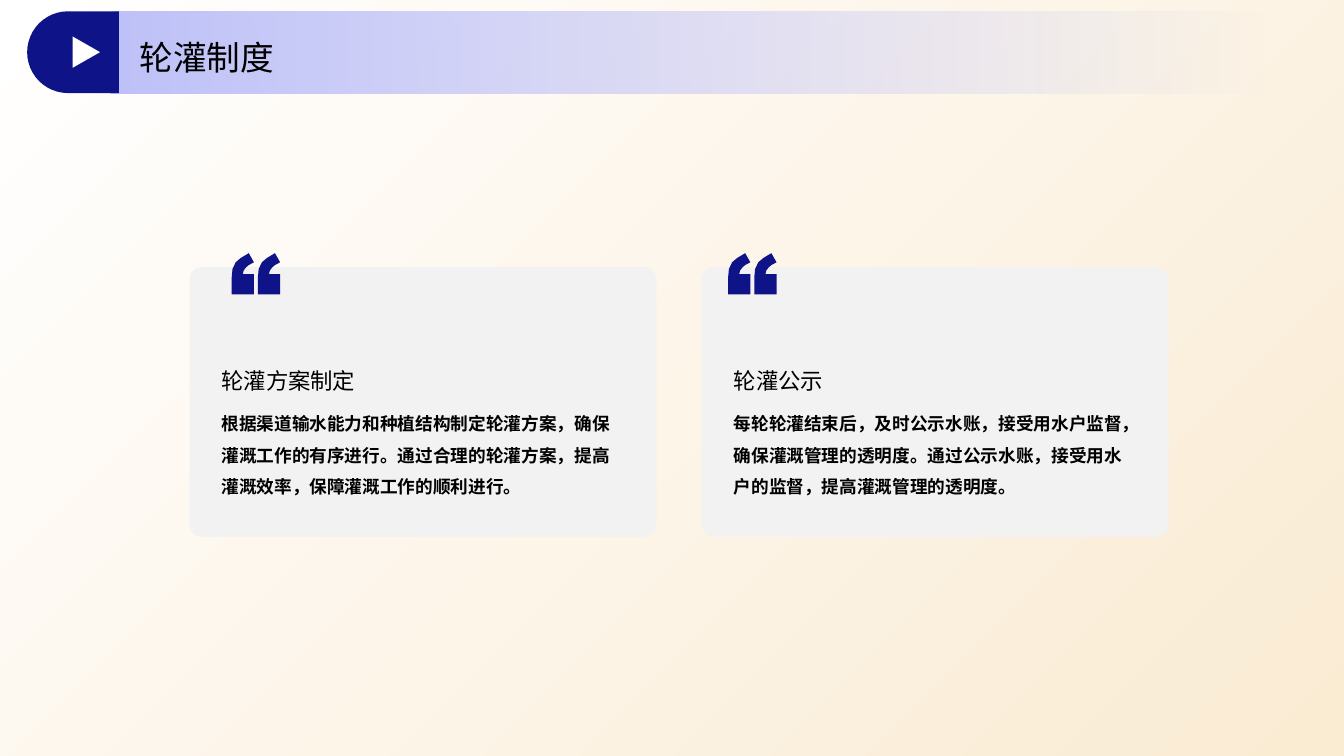
"""Build the rotational irrigation slide with two quoted cards."""
import lxml.etree
import pptx
import pptx.dml.color
import pptx.enum.shapes
import pptx.enum.text
import pptx.oxml.ns
import pptx.util

Cm = pptx.util.Cm
Pt = pptx.util.Pt
qn = pptx.oxml.ns.qn
SHAPE = pptx.enum.shapes.MSO_SHAPE
ANCHOR = pptx.enum.text.MSO_ANCHOR

COLORS = {
    "navy": "0E1488",
    "lilac": "BEC1F8",
    "card": "F2F2F2",
    "sand": "FAEBD3",
    "white": "FFFFFF",
    "text": "000000",
}
FONT = "Noto Sans CJK SC"
WIDTH, HEIGHT = 33.87, 19.05

CARD_TOP, CARD_WIDTH, CARD_HEIGHT = 6.73, 11.76, 6.8
CARDS = [
    (4.78, 1.06, "轮灌方案制定",
     "根据渠道输水能力和种植结构制定轮灌方案，确保灌溉工作的有序进行。"
     "通过合理的轮灌方案，提高灌溉效率，保障灌溉工作的顺利进行。"),
    (17.69, 0.66, "轮灌公示",
     "每轮轮灌结束后，及时公示水账，接受用水户监督，确保灌溉管理的透明度。"
     "通过公示水账，接受用水户的监督，提高灌溉管理的透明度。"),
]


def curve(p0, p1, p2, p3):
    """Return the middle and the end of a cubic Bezier curve."""
    middle = tuple((a + 3 * b + 3 * c + d) / 8 for a, b, c, d in zip(p0, p1, p2, p3))
    return [middle, p3]


QUOTE_MARK = [
    (43, 0), (56, 23),
    *curve((56, 23), (46, 28), (38, 33), (36, 36)),
    *curve((36, 36), (30, 41), (30, 46), (28, 53)),
    (56, 53), (56, 104), (0, 104), (0, 61),
    *curve((0, 61), (0, 46), (3, 33), (10, 23)),
    *curve((10, 23), (15, 15), (28, 8), (43, 0))[:1],
]
QUOTE_STEP = 66


class SlideBuilder:
    """Hold the style and the current slide."""

    def __init__(self, prs, layout):
        """Add a slide with the given layout."""
        self.s = prs.slides.add_slide(layout)

    def color(self, name):
        """Return a named colour."""
        return pptx.dml.color.RGBColor.from_string(COLORS[name])

    def finish(self, sp, fill):
        """Give a shape a plain fill and no line or shadow."""
        sp.shadow.inherit = False
        sp.line.fill.background()
        if fill:
            sp.fill.solid()
            sp.fill.fore_color.rgb = self.color(fill)
        return sp

    def shape(self, kind, box, fill=None, adjustments=(), rotation=0):
        """Add a preset shape."""
        sp = self.s.shapes.add_shape(kind, *map(Cm, box))
        for i, value in enumerate(adjustments):
            sp.adjustments[i] = value
        sp.rotation = rotation
        return self.finish(sp, fill)

    def gradient(self, kind, box, start, end, angle=0, fade=False):
        """Add a preset shape with a linear gradient."""
        sp = self.shape(kind, box)
        sp.fill.gradient()
        sp.fill.gradient_angle = angle
        for stop, name, position in zip(sp.fill.gradient_stops, (start, end), (0, 1)):
            stop.color.rgb = self.color(name)
            stop.position = position
        if fade:
            last = list(sp.element.spPr.iter(qn("a:srgbClr")))[-1]
            lxml.etree.SubElement(last, qn("a:alpha"), val="0")
        return sp

    def quotes(self, left, top):
        """Add a pair of opening quotation marks."""
        second = [(x + QUOTE_STEP, y) for x, y in QUOTE_MARK]
        builder = self.s.shapes.build_freeform(*QUOTE_MARK[0], scale=Cm(0.01))
        builder.add_line_segments(QUOTE_MARK[1:], close=True)
        builder.move_to(*second[0])
        builder.add_line_segments(second[1:], close=True)
        return self.finish(builder.convert_to_shape(Cm(left), Cm(top)), "navy")

    def text(self, idx, box, text, size, spacing, anchor, inset=(0, 0), bold=False):
        """Fill a placeholder, place it and bring it to the front."""
        sp = self.s.placeholders[idx]
        self.s.shapes.element.append(sp.element)
        sp.left, sp.top, sp.width, sp.height = map(Cm, box)
        tf = sp.text_frame
        tf.text = text
        tf.word_wrap = True
        tf.auto_size = pptx.enum.text.MSO_AUTO_SIZE.NONE
        tf.vertical_anchor = anchor
        tf.margin_left = tf.margin_right = Cm(inset[0])
        tf.margin_top = tf.margin_bottom = Cm(inset[1])
        p = tf.paragraphs[0]
        pPr = p._p.get_or_add_pPr()
        pPr.set("marL", "0")
        pPr.set("indent", "0")
        lxml.etree.SubElement(pPr, qn("a:buNone"))
        p.alignment = pptx.enum.text.PP_ALIGN.LEFT
        p.line_spacing = spacing
        p.space_before = Pt(0)
        r = p.runs[0]
        r.font.size = Pt(size)
        r.font.bold = bold
        r.font.color.rgb = self.color("text")
        r.font.name = FONT
        lxml.etree.SubElement(r._r.get_or_add_rPr(), qn("a:ea"), typeface=FONT)

    def card(self, number, left, quote_offset, heading, body):
        """Add one card with its heading, body and quotation marks."""
        self.shape(SHAPE.ROUNDED_RECTANGLE,
                   (left, CARD_TOP, CARD_WIDTH, CARD_HEIGHT), "card", [0.046])
        text_left, text_width, inset = left + 0.62, 10.55, (0.18, 0.1)
        self.text(2 * number + 1, (text_left, 7.74, text_width, 2.29),
                  heading, 16, 1.3, ANCHOR.BOTTOM, inset)
        self.text(2 * number + 2, (text_left, 10.03, text_width, 2.86),
                  body, 12.65, 1.5, ANCHOR.TOP, inset, bold=True)
        self.quotes(left + quote_offset, 6.38)

    def header(self, title):
        """Add the title bar with its play button."""
        self.gradient(SHAPE.ROUNDED_RECTANGLE, (2.54, 0.3, 29.46, 2.05),
                      "lilac", "lilac", fade=True)
        self.text(0, (3.52, 0.69, 21.62, 1.37), title, 24, 1.1, ANCHOR.MIDDLE)
        self.shape(SHAPE.ROUND_2_SAME_RECTANGLE, (0.81, 0.16, 2.06, 2.31),
                   "navy", [0.5, 0], 270)
        self.shape(SHAPE.ISOSCELES_TRIANGLE, (1.78, 0.97, 0.79, 0.69),
                   "white", rotation=90)


def main():
    """Build and save the presentation."""
    prs = pptx.Presentation()
    prs.slide_width, prs.slide_height = Cm(WIDTH), Cm(HEIGHT)
    comparison = prs.slide_layouts.get_by_name("Comparison")
    slide = SlideBuilder(prs, comparison)
    slide.gradient(SHAPE.RECTANGLE, (0, 0, WIDTH, HEIGHT), "white", "sand", angle=315)
    for number, card in enumerate(CARDS):
        slide.card(number, *card)
    slide.header("轮灌制度")
    prs.save("out.pptx")


if __name__ == "__main__":
    main()
